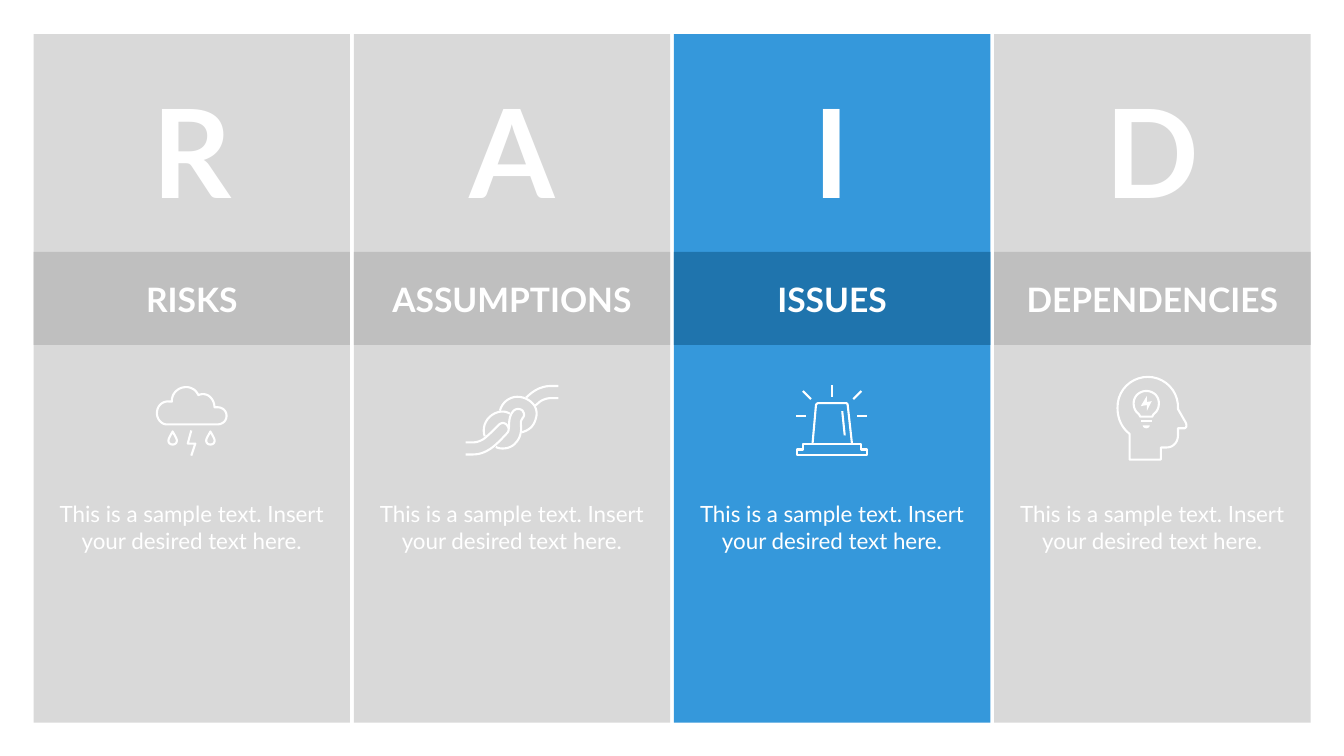
from lxml.etree import SubElement
from pptx import Presentation
from pptx.dml.color import RGBColor
from pptx.enum.shapes import MSO_CONNECTOR as Connector, MSO_SHAPE as Shape
from pptx.enum.text import MSO_ANCHOR as Anchor, PP_ALIGN as Align
from pptx.oxml.ns import qn
from pptx.util import Pt

COLORS = {
    "panel": "D9D9D9",
    "band": "BFBFBF",
    "active_panel": "3598DB",
    "active_band": "1F74AD",
    "ink": "FFFFFF",
}
FONT = "Lato"
STROKE = 1.5
UNIT = 0.72
GRAIN = 100
CURVE_STEPS = 10
COLUMN_LEFT, COLUMN_TOP, COLUMN_WIDTH, COLUMN_HEIGHT = 24, 24.5, 226, 491.8
COLUMN_PITCH = 228.7
DESCRIPTION = "This is a sample text. Insert your desired text here."

LETTER_FORMAT = {"size": Pt(88), "bold": True}
HEADING_FORMAT = {"size": Pt(24), "bold": True}
DESCRIPTION_FORMAT = {"size": Pt(16), "bold": False}
NO_INSETS = dict.fromkeys(("margin_left", "margin_top", "margin_right", "margin_bottom"), 0)


def raindrop(x, y):
    return [(x, y), (x + 1.5, y + 3, x + 4.2, y + 7, x + 4.2, y + 9),
            (x + 4.2, y + 11.5, x + 2.3, y + 13, x, y + 13),
            (x - 2.3, y + 13, x - 4.2, y + 11.5, x - 4.2, y + 9),
            (x - 4.2, y + 7, x - 1.5, y + 3, x, y)]


STORM = {
    "width": 71, "top": 251.3,
    "closed": [
        [(61, 38), (11, 38), (5.5, 38.5, 0, 32, 1, 25.5), (1.5, 19, 7, 14.5, 13.5, 15.3),
         (15.6, 15.5), (15.5, 7, 22, 1, 30, 1), (35, 1, 40, 4, 42, 9), (44, 8, 46, 8, 47, 8),
         (53, 8, 58, 14, 58, 21), (61, 21), (66, 21, 70, 24.5, 70, 29.5),
         (70, 34.5, 66, 38, 61, 38)],
        raindrop(16.5, 45),
        raindrop(54, 45),
    ],
    "open": [[(35, 44), (31.5, 57), (39, 57), (35, 69)]],
}
KNOT = {
    "width": 92, "top": 250.5,
    "open": [
        [(92, 1), (85, 1), (77, 1, 70, 4, 64, 9), (60, 12.5)],
        [(92, 13), (85, 13), (80, 13, 75, 15, 72, 18), (68.5, 21)],
        [(34, 25.5), (37, 15, 47, 9.5, 57, 12.5), (67, 15.5, 73, 24, 69.5, 34),
         (67.5, 41, 63, 45, 55.5, 47)],
        [(19, 51), (15.5, 41, 21.5, 30, 32, 27), (36, 26, 40, 26, 44, 28.5)],
        [(0, 57), (7, 57), (12, 57, 16.5, 55, 20, 52), (25, 47.5), (33, 39.5),
         (36, 37, 39, 37, 41.5, 40.5), (43.5, 43, 43, 46, 41, 48), (34, 55.5), (29, 60),
         (22, 66, 15, 69, 7, 69), (0, 69)],
        [(30, 61.5), (33, 63, 35, 63, 37, 63), (42, 63, 47, 61, 50, 57),
         (53, 54, 54.5, 50, 55, 45), (55.3, 41, 54.5, 38, 55, 36),
         (55.5, 34.5, 56, 34, 56.5, 33), (59, 30, 58, 28, 56.5, 25.5),
         (54, 23, 49, 23, 46.5, 27), (43.5, 31, 43, 36, 43, 44)],
    ],
}
SIREN = {
    "width": 71, "top": 250.5,
    "closed": [[(1, 69.7), (1, 64), (7, 64), (7, 59), (64, 59), (64, 64), (70, 64), (70, 69.7)]],
    "open": [[(16, 59), (19.5, 20), (19.7, 19, 20.5, 18, 22, 18), (49, 18),
              (50.5, 18, 51, 19, 51, 20), (55.3, 59)]],
    "lines": [(45.5, 26, 48, 50), (35.5, 0, 35.5, 12), (0, 31, 10, 31), (60.5, 31, 70.5, 31),
              (6.5, 6, 14.5, 14), (64.5, 6, 56.5, 14)],
}
IDEA = {
    "width": 71, "top": 244,
    "closed": [
        [(61, 33), (68.5, 46), (70, 49, 69.5, 52, 67, 52), (61, 52), (61, 59),
         (61, 66, 56, 71, 50, 71), (44, 71), (44, 83), (13, 83), (13, 57.5),
         (5, 51.5, 1, 42, 1, 32), (0.5, 14, 15, 1, 31, 1), (48, 1, 62, 15, 61, 33)],
        [(17, 27), (17, 20, 23, 15, 29.5, 15), (36.5, 15, 42, 20, 42, 27),
         (42, 31, 41, 33.5, 39, 36), (37, 37.5, 36, 39, 35.5, 40.5), (23.5, 40.5),
         (23, 39, 22, 37.5, 20, 36), (18, 33.5, 17, 31, 17, 27)],
    ],
    "filled": [
        [(30, 20), (24, 30), (30, 29), (30, 35), (35, 25), (30, 26)],
        [(26, 49), (33, 49), (33, 51, 31, 52, 29.5, 52), (28, 52, 26, 51, 26, 49)],
    ],
    "lines": [(24.5, 45, 35.5, 45)],
}
COLUMNS = [
    ("R", "RISKS", STORM, ""),
    ("A", "ASSUMPTIONS", KNOT, ""),
    ("I", "ISSUES", SIREN, "active_"),
    ("D", "DEPENDENCIES", IDEA, ""),
]


def set_all(target, values):
    for attribute, value in values.items():
        setattr(target, attribute, value)


def rgb(name):
    return RGBColor.from_string(COLORS[name])


def paint(fill, name):
    fill.solid()
    fill.fore_color.rgb = rgb(name)


def draw_block(slide, box, color):
    block = slide.shapes.add_shape(Shape.RECTANGLE, *map(Pt, box))
    block.shadow.inherit = False
    paint(block.fill, color)
    block.line.fill.background()


def draw_text(slide, box, text, font_format, frame_format):
    frame = slide.shapes.add_textbox(*map(Pt, box)).text_frame
    set_all(frame, {"word_wrap": True, **frame_format})
    paragraph = frame.paragraphs[0]
    paragraph.alignment = Align.CENTER
    run = paragraph.add_run()
    run.text = text
    set_all(run.font, {"name": FONT, **font_format})
    run.font.color.rgb = rgb("ink")


def flatten(segments):
    points = [segments[0]]
    for segment in segments[1:]:
        if len(segment) == 2:
            points.append(segment)
            continue
        controls = [points[-1], segment[:2], segment[2:4], segment[4:]]
        for step in range(1, CURVE_STEPS + 1):
            t = step / CURVE_STEPS
            weights = ((1 - t) ** 3, 3 * t * (1 - t) ** 2, 3 * t ** 2 * (1 - t), t ** 3)
            points.append(tuple(sum(w * c[axis] for w, c in zip(weights, controls))
                                for axis in (0, 1)))
    return [(x * GRAIN, y * GRAIN) for x, y in points]


def draw_outline(slide, left, top, segments, kind):
    start, *rest = flatten(segments)
    builder = slide.shapes.build_freeform(*start, scale=Pt(UNIT) / GRAIN)
    builder.add_line_segments(rest, close=kind != "open")
    outline = builder.convert_to_shape(Pt(left), Pt(top))
    outline.shadow.inherit = False
    if kind == "filled":
        paint(outline.fill, "ink")
        outline.line.fill.background()
    else:
        outline.fill.background()
        paint(outline.line.fill, "ink")
        outline.line.width = Pt(STROKE)


def draw_icon(slide, center, top, icon):
    left = center - icon["width"] * UNIT / 2
    for kind in ("closed", "open", "filled"):
        for segments in icon.get(kind, []):
            draw_outline(slide, left, top, segments, kind)
    for x1, y1, x2, y2 in icon.get("lines", []):
        ends = (left + x1 * UNIT, top + y1 * UNIT, left + x2 * UNIT, top + y2 * UNIT)
        ray = slide.shapes.add_connector(Connector.STRAIGHT, *map(Pt, ends))
        paint(ray.line.fill, "ink")
        ray.line.width = Pt(STROKE)
        SubElement(ray._element.spPr, qn("a:effectLst"))


def draw_column(slide, box, letter, heading, icon, state):
    left, top, width, height = box
    draw_block(slide, box, state + "panel")
    draw_block(slide, (left, top + 155.5, width, 66.4), state + "band")
    inner_left, inner_width = left + 17.5, width - 35
    draw_text(slide, (inner_left, top + 25.9, inner_width, 113.8), letter, LETTER_FORMAT, {})
    draw_text(slide, (inner_left, top + 167, inner_width, 44.6), heading, HEADING_FORMAT,
              {**NO_INSETS, "vertical_anchor": Anchor.MIDDLE})
    draw_icon(slide, left + width / 2, top + icon["top"], icon)
    draw_text(slide, (inner_left, top + 332.6, inner_width, 133.9), DESCRIPTION,
              DESCRIPTION_FORMAT, NO_INSETS)


def main():
    deck = Presentation()
    set_all(deck, {"slide_width": Pt(960), "slide_height": Pt(540)})
    slide = deck.slides.add_slide(deck.slide_layouts.get_by_name("Blank"))
    for index, column in enumerate(COLUMNS):
        box = (COLUMN_LEFT + index * COLUMN_PITCH, COLUMN_TOP, COLUMN_WIDTH, COLUMN_HEIGHT)
        draw_column(slide, box, *column)
    deck.save("out.pptx")


if __name__ == "__main__":
    main()
